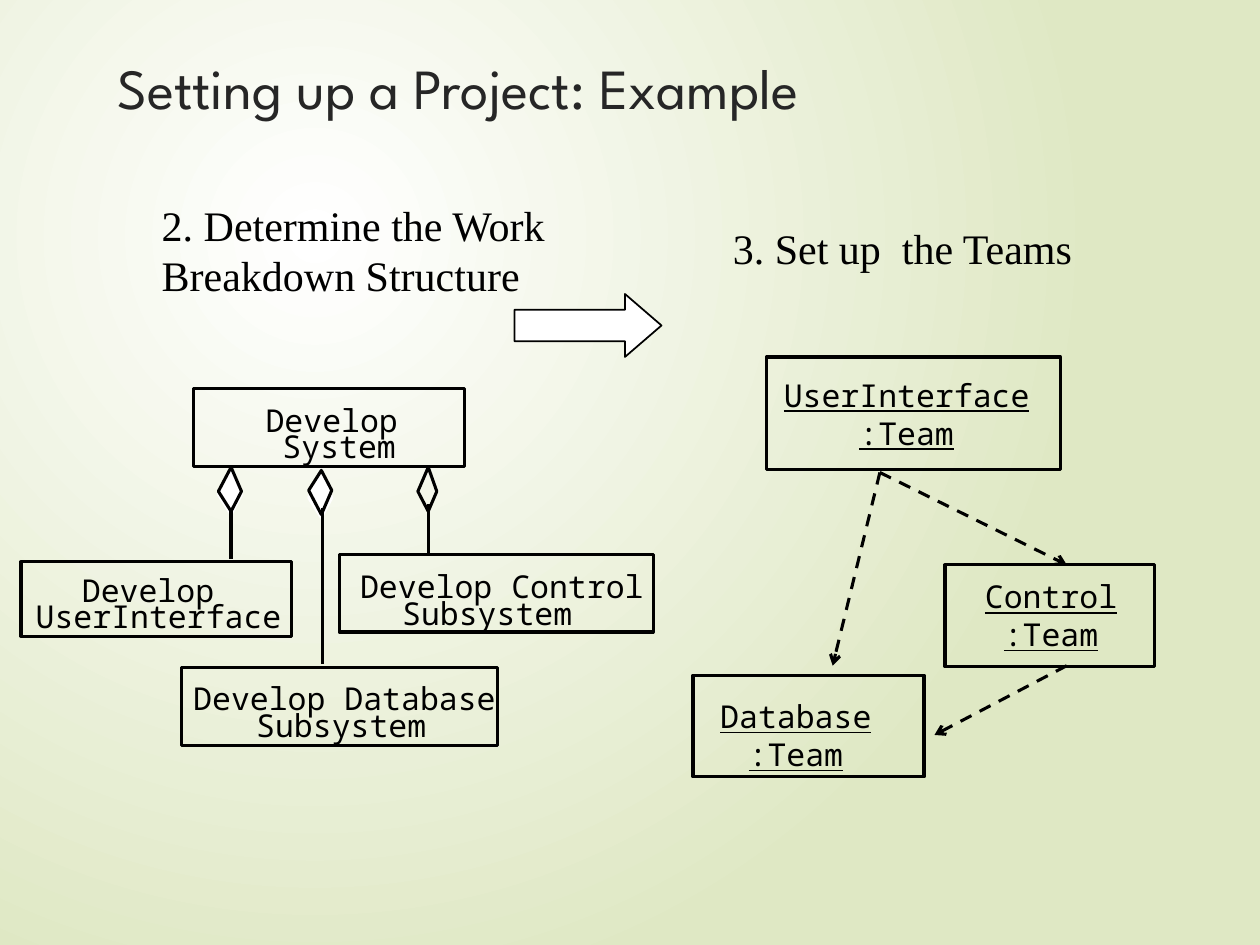
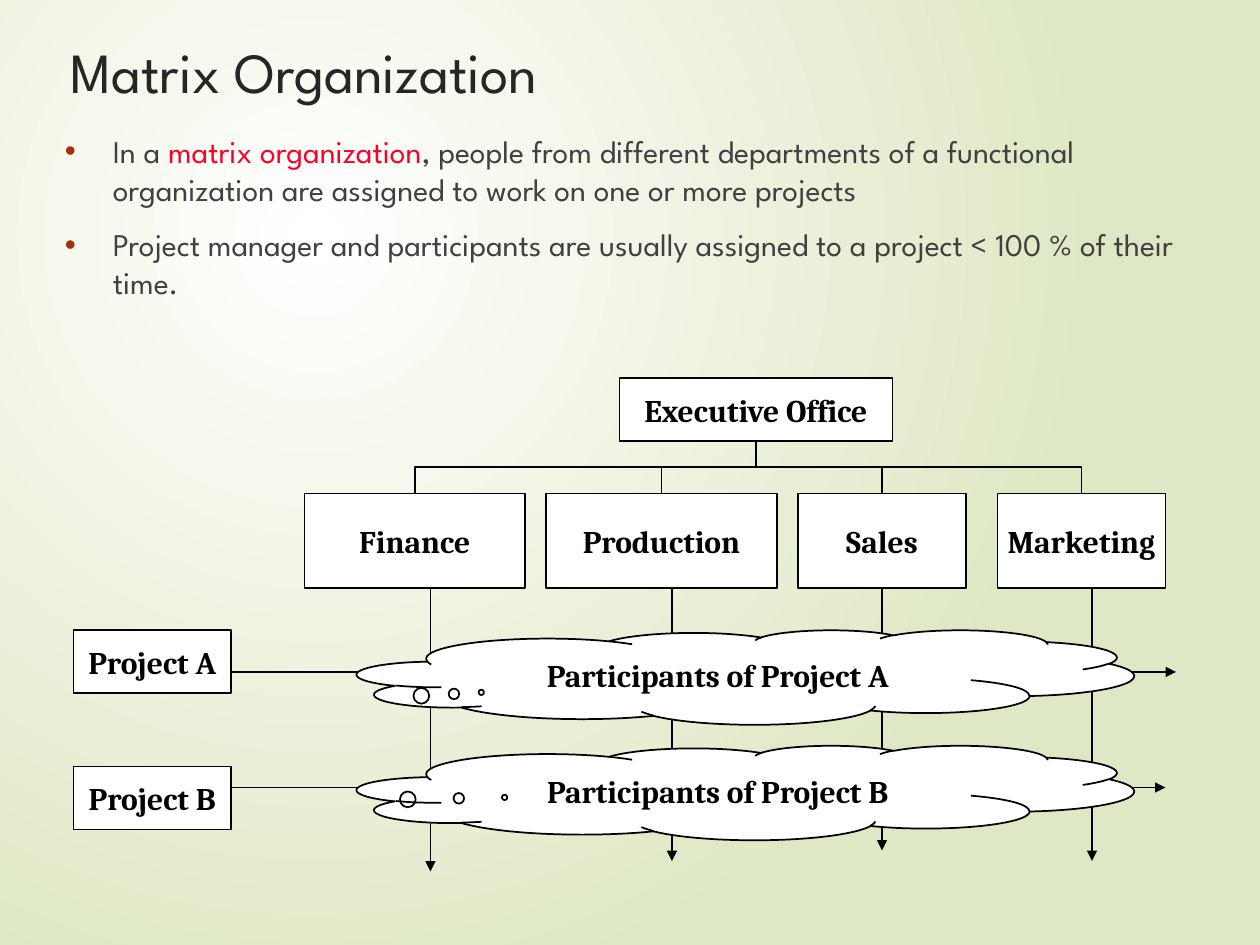
"""Build two project organization slides: team setup and matrix organization."""
from lxml import etree
from pptx import Presentation
from pptx import util as u
from pptx.dml import color
from pptx.enum import dml, shapes, text
from pptx.oxml import ns

BLACK = color.RGBColor(0x00, 0x00, 0x00)
WHITE = color.RGBColor(0xFF, 0xFF, 0xFF)
PALE_GREEN = color.RGBColor(0xDF, 0xE8, 0xC4)
TITLE_GREY = color.RGBColor(0x26, 0x26, 0x26)
BODY_GREY = color.RGBColor(0x40, 0x40, 0x40)
RUST = color.RGBColor(0xA5, 0x30, 0x10)
RED = color.RGBColor(0xFC, 0x01, 0x28)

SANS, SERIF, MONO, BOLD_SERIF = "League Spartan", "Times New Roman", "Noto Sans Mono", "Cambria"
CENTER = text.PP_ALIGN.CENTER
RECT = shapes.MSO_SHAPE.RECTANGLE
COLUMNS, ROWS = 120, 90
WIDTH, HEIGHT = u.Inches(10), u.Inches(7.5)
BOTTOM, TOP = 2, 0
THICK, THIN = 1.75, 1


def add_xml(parent, tag, **attributes):
    """Append a drawing element to parent and return it."""
    return etree.SubElement(parent, ns.qn(tag), attributes)


def write_text(frame, paras, font=MONO, size=18, ink=BLACK, bold=False, underline=False,
               align=None, wrap=False, inset=None, grow=False, bullet=None):
    """Fill a text frame; each paragraph is a string or a list of (text, colour) spans."""
    frame.word_wrap = wrap
    if grow:
        frame.auto_size = text.MSO_AUTO_SIZE.SHAPE_TO_FIT_TEXT
    if inset is not None:
        frame.margin_left = frame.margin_top = frame.margin_right = frame.margin_bottom = inset
    for index, content in enumerate(paras):
        para = frame.add_paragraph() if index else frame.paragraphs[0]
        para.alignment = align
        if bullet:
            para.space_before = u.Pt(10)
            properties = para._p.get_or_add_pPr()
            properties.set("marL", str(u.Inches(0.38)))
            properties.set("indent", str(-u.Inches(0.38)))
            add_xml(add_xml(properties, "a:buClr"), "a:srgbClr", val=str(RUST))
            add_xml(properties, "a:buFont", typeface="Arial")
            add_xml(properties, "a:buChar", char=bullet)
        for words, tint in [(content, ink)] if isinstance(content, str) else content:
            span = para.add_run()
            span.text = words
            span.font.name, span.font.size = font, u.Pt(size)
            span.font.bold, span.font.underline = bold, underline
            span.font.color.rgb = tint


class Painter:
    """Hold the shared style and draw elements on the current slide."""

    def __init__(self, deck):
        """Set the slide size of the deck."""
        self.deck = deck
        self.page = None
        deck.slide_width, deck.slide_height = WIDTH, HEIGHT

    def x(self, columns):
        """Convert grid columns to a length."""
        return u.Emu(round(WIDTH * columns / COLUMNS))

    def y(self, rows):
        """Convert grid rows to a length."""
        return u.Emu(round(HEIGHT * rows / ROWS))

    def place(self, left, top, width, height):
        """Convert a grid rectangle to lengths."""
        return self.x(left), self.y(top), self.x(width), self.y(height)

    def new_page(self, title, at):
        """Start a slide with the gradient background and a title."""
        self.page = self.deck.slides.add_slide(self.deck.slide_layouts[6])
        fill = self.page.background.fill
        fill.gradient()
        for stop, tint in zip(fill.gradient_stops, (WHITE, PALE_GREEN)):
            stop.color.rgb = tint
        gradient = self.page.element.find(".//" + ns.qn("a:gradFill"))
        gradient.remove(gradient.find(ns.qn("a:lin")))
        circle = add_xml(gradient, "a:path", path="circle")
        add_xml(circle, "a:fillToRect", l="50000", t="50000", r="100000", b="100000")
        self.label(at, [title], font=SANS, size=32.4, ink=TITLE_GREY, wrap=True)

    def label(self, at, paras, **form):
        """Add a text box."""
        box = self.page.shapes.add_textbox(*self.place(*at))
        write_text(box.text_frame, paras, **form)

    def tight_label(self, at, paras, **form):
        """Add a text box without margins that fits its text."""
        self.label(at, paras, inset=0, grow=True, **form)

    def finish(self, shape, fill, ink, weight):
        """Set the fill and outline of a shape."""
        shape.shadow.inherit = False
        if fill is None:
            shape.fill.background()
        else:
            shape.fill.solid()
            shape.fill.fore_color.rgb = fill
        shape.line.color.rgb = ink
        shape.line.width = u.Pt(weight)
        return shape

    def figure(self, at, kind=RECT, fill=None, weight=THICK, adjust=()):
        """Add a preset shape."""
        shape = self.page.shapes.add_shape(kind, *self.place(*at))
        for index, value in enumerate(adjust):
            shape.adjustments[index] = value
        return self.finish(shape, fill, BLACK, weight)

    def named_figure(self, at, name, **form):
        """Add a white shape with a bold centred name."""
        shape = self.figure(at, fill=WHITE, weight=THIN, **form)
        shape.text_frame.vertical_anchor = text.MSO_ANCHOR.MIDDLE
        write_text(shape.text_frame, [name], font=BOLD_SERIF, bold=True, align=CENTER)
        return shape

    def diamond(self, left, top, width=2.2, waist=2.3, fill=None, ink=BLACK):
        """Add an aggregation diamond as a freeform."""
        middle, height = left + width * 0.55, 4.2
        corners = [(left, top + waist), (middle, top + height),
                   (left + width, top + waist), (middle, top)]
        points = [(self.x(column), self.y(row)) for column, row in corners]
        builder = self.page.shapes.build_freeform(*points[0])
        builder.add_line_segments(points[1:], close=True)
        self.finish(builder.convert_to_shape(), fill, ink, THICK)

    def line(self, start, end, weight=THICK, head=None, dashed=False, source=None,
             kind=shapes.MSO_CONNECTOR.STRAIGHT):
        """Add a connector, glued to the bottom of source if given."""
        link = self.page.shapes.add_connector(
            kind, self.x(start[0]), self.y(start[1]), self.x(end[0]), self.y(end[1]))
        link.line.color.rgb = BLACK
        link.line.width = u.Pt(weight)
        if dashed:
            link.line.dash_style = dml.MSO_LINE.DASH
        if head:
            add_xml(link.line._get_or_add_ln(), "a:tailEnd", type=head)
        add_xml(link.element.spPr, "a:effectLst")
        if source is not None:
            link.begin_connect(source, BOTTOM)
        return link

    def elbow(self, parent, child):
        """Join the bottom of parent to the top of child by a bent connector."""
        link = self.line((0, 0), (1, 1), THIN, source=parent,
                         kind=shapes.MSO_CONNECTOR.ELBOW)
        link.end_connect(child, TOP)
        start_x, end_x = (box.left + box.width // 2 for box in (parent, child))
        start_y, end_y = parent.top + parent.height, child.top
        drop, reach = end_y - start_y, abs(end_x - start_x)
        link.left = u.Emu((start_x + end_x - drop) // 2)
        link.top = u.Emu((start_y + end_y - reach) // 2)
        link.width, link.height = u.Emu(drop), u.Emu(reach)
        rightward = end_x > start_x
        frame = link.element.find(".//" + ns.qn("a:xfrm"))
        frame.set("rot", str((270 if rightward else 90) * 60000))
        frame.set("flipH", "1" if rightward else "0")
        frame.set("flipV", "0")


def draw_project_setup(painter):
    """Draw the work breakdown structure and the teams."""
    painter.new_page("Setting up a Project: Example", (10, 4.4, 86.5, 10.6))
    headings = [((15.4, 19, 41.2, 9.7), "2. Determine the Work Breakdown Structure"),
                ((69.8, 21.2, 41.2, 4.8), "3. Set up  the Teams")]
    for at, heading in headings:
        painter.tight_label(at, [heading], font=SERIF, size=24, wrap=True)

    tasks = [
        ((18.4, 37, 25.8, 7.4), ("Develop", 25.3, 38.2, 14.4), ("System", 26.9, 40.7, 10.8)),
        ((2, 53.5, 25.8, 7.1), ("Develop", 7.8, 54.4, 12.6), ("UserInterface", 3.4, 56.9, 23.5)),
        ((17.3, 63.6, 30.1, 7.4), ("Develop Database", 18.4, 64.7, 28.9),
         ("Subsystem", 24.4, 67.2, 16.3)),
        ((32.3, 52.8, 29.9, 7.4), ("Develop Control", 34.3, 54, 27.1),
         ("Subsystem", 38.3, 56.6, 16.3)),
    ]
    for at, *lines in tasks:
        painter.figure(at)
        for words, left, top, width in lines:
            painter.tight_label((left, top, width, 3.6), [words])

    for left, top, waist in [(20.8, 44.5, 2.3), (29.4, 44.8, 1.9)]:
        painter.diamond(left, top + 0.3, fill=WHITE, ink=WHITE)
        painter.diamond(left, top, waist=waist)
    painter.diamond(39.8, 44.5, width=1.8)
    for column, top, bottom in [(30.7, 48.4, 63.2), (22, 48.4, 53.2), (40.8, 48, 52.8)]:
        painter.line((column, top), (column, bottom))

    teams = [
        ("UserInterface", (73, 34, 28, 10.7), (74.6, 35.8, 23.5, 7.2)),
        ("Control", (90, 53.8, 20, 9.7), (93.8, 55, 12.6, 7.2)),
        ("Database", (66, 64.3, 22, 9.7), (68.6, 66.4, 14.4, 7.2)),
    ]
    for name, frame, label in teams:
        painter.figure(frame)
        painter.tight_label(label, [name, ":Team"], underline=True, align=CENTER)
    interface_exit = (83.8, 45)
    for start, end in [(interface_exit, (79.3, 63.4)), (interface_exit, (101.6, 53.8)),
                       ((101.6, 63.4), (89, 70))]:
        painter.line(start, end, head="arrow", dashed=True)
    painter.figure((49, 28, 14, 6), kind=shapes.MSO_SHAPE.RIGHT_ARROW, fill=WHITE,
                   weight=THIN, adjust=(0.5, 0.58))


def draw_matrix_organization(painter):
    """Draw departments crossed by projects."""
    painter.new_page("Matrix Organization", (5.5, 2.9, 107, 8))
    painter.label((5, 12, 111, 25), [
        [("In a ", BODY_GREY), ("matrix organization", RED),
         (", people from different departments of a functional organization "
          "are assigned to work on one or more projects", BODY_GREY)],
        "Project manager and participants are usually assigned to a project "
        "< 100 % of their time.",
    ], font=SANS, ink=BODY_GREY, wrap=True, bullet="•")

    office = painter.named_figure((59, 36, 26, 6), "Executive Office")
    departments = [("Finance", 29, 21, 41, 83), ("Production", 52, 22, 64, 82),
                   ("Sales", 76, 16, 84, 81), ("Marketing", 95, 16, 104, 82)]
    for name, left, width, column, end in departments:
        box = painter.named_figure((left, 47, width, 9), name)
        painter.elbow(office, box)
        centred = column == left + width / 2
        painter.line((column, 56), (column, end), THIN, head="triangle",
                     source=box if centred else None)

    projects = [("Project A", 60, 64, 112, 60, (-0.34, 0.16)),
                ("Project B", 73, 75, 111, 71, (-0.31, 0.05))]
    for name, top, row, end, cloud_top, tip in projects:
        painter.line((22, row), (end, row), THIN, head="triangle")
        painter.named_figure((7, top, 15, 6), name)
        painter.named_figure((34, cloud_top, 74, 9), "Participants of " + name,
                             kind=shapes.MSO_SHAPE.CLOUD_CALLOUT, adjust=tip)


def main():
    """Build and save the deck."""
    deck = Presentation()
    painter = Painter(deck)
    draw_project_setup(painter)
    draw_matrix_organization(painter)
    deck.save("out.pptx")


if __name__ == "__main__":
    main()
